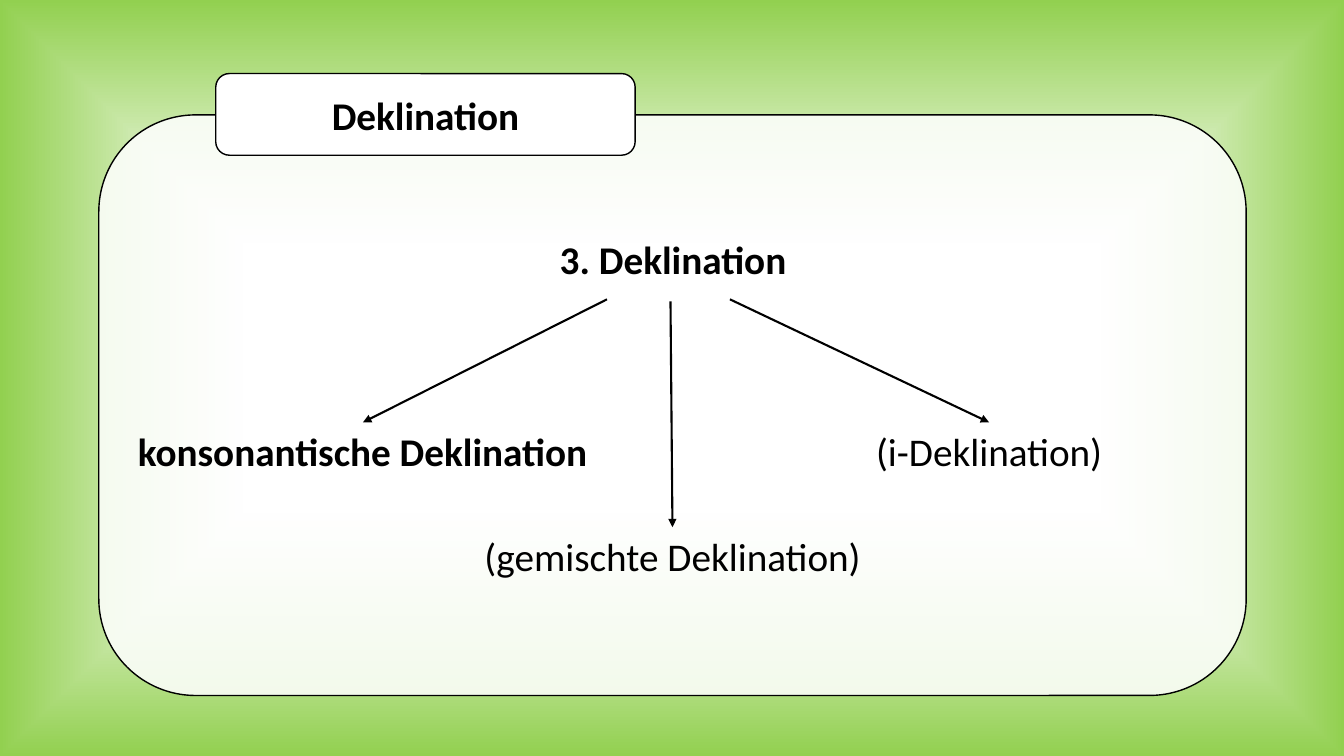
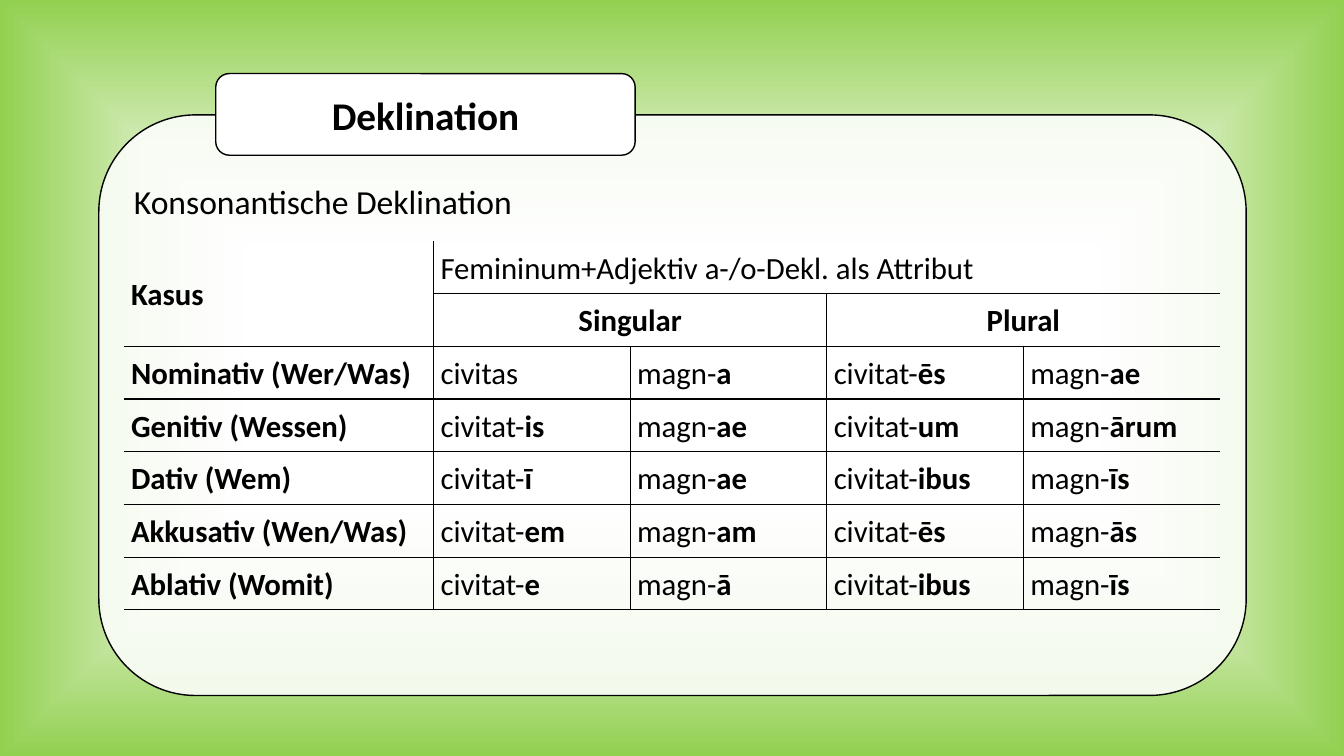
from pptx import Presentation
from pptx import util as u
from pptx.dml.color import RGBColor
from pptx.enum import shapes, text
from pptx.oxml import parse_xml
from pptx.oxml.ns import nsdecls, qn
from lxml import etree

PX = 9144  # EMU in one px, 100 px to the inch
FONT = "Calibri"
BLACK, WHITE = "000000", "FFFFFF"
STOPS = [(3, WHITE), (30, WHITE), (35, WHITE), (100, "92D050"), (100, "5B9BD5")]
NO_STYLE = "{2D5ABB26-0587-4C30-8999-92F81FD0307C}"
LEFT, MID = text.PP_ALIGN.LEFT, text.PP_ALIGN.CENTER

# Case name, then singular and plural of noun and adjective; bold follows the bar
CASES = [
    ("|Nominativ (Wer/Was)", "civitas", "magn-|a", "civitat-|ēs", "magn-|ae"),
    ("|Genitiv (Wessen)", "civitat-|is", "magn-|ae", "civitat-|um", "magn-|ārum"),
    ("|Dativ (Wem)", "civitat-|ī", "magn-|ae", "civitat-|ibus", "magn-|īs"),
    ("|Akkusativ (Wen/Was)", "civitat-|em", "magn-|am", "civitat-|ēs", "magn-|ās"),
    ("|Ablativ (Womit)", "civitat-|e", "magn-|ā", "civitat-|ibus", "magn-|īs"),
]


def px(*vals):
    return [u.Emu(v * PX) for v in vals]


def color(code):
    return RGBColor.from_string(code)


def write(frame, words, size, align=LEFT):
    """Fill the first paragraph; what follows a bar is bold."""
    para = frame.paragraphs[0]
    para.alignment = align
    plain, _, bold = words.partition("|")
    for part, heavy in ((plain, False), (bold, True)):
        if part:
            run = para.add_run()
            run.text = part
            run.font.name = FONT
            run.font.size = u.Pt(size)
            run.font.bold = heavy
            run.font.color.rgb = color(BLACK)
    return para


def paint(slide):
    """Gradient background that runs from the centre to the edges."""
    slide.background.fill.gradient()
    grad = slide.element.find(".//" + qn("a:gradFill"))
    stops = "".join(
        f'<a:gs pos="{pos * 1000}"><a:srgbClr val="{code}"/></a:gs>'
        for pos, code in STOPS)
    grad.getparent().replace(grad, parse_xml(
        f'<a:gradFill {nsdecls("a")} rotWithShape="1"><a:gsLst>{stops}</a:gsLst>'
        '<a:path path="shape"><a:fillToRect l="50000" t="50000" r="50000" b="50000"/>'
        '</a:path></a:gradFill>'))


def panel(slide, *box):
    """White rounded box with a thin black outline."""
    shape = slide.shapes.add_shape(shapes.MSO_SHAPE.ROUNDED_RECTANGLE, *px(*box))
    shape.shadow.inherit = False
    shape.fill.solid()
    shape.fill.fore_color.rgb = color(WHITE)
    shape.line.color.rgb = color(BLACK)
    shape.line.width = u.Pt(1)
    return shape


def label(slide, box, words, size=28, align=MID):
    frame = slide.shapes.add_textbox(*px(*box)).text_frame
    frame.word_wrap = False
    frame.auto_size = text.MSO_AUTO_SIZE.SHAPE_TO_FIT_TEXT
    write(frame, words, size, align)


def arrow(slide, *ends):
    line = slide.shapes.add_connector(shapes.MSO_CONNECTOR.STRAIGHT, *px(*ends))
    line.line.color.rgb = color(BLACK)
    line.line.width = u.Pt(1.5)
    etree.SubElement(line.line._get_or_add_ln(), qn("a:tailEnd"), type="triangle")
    etree.SubElement(line.element.spPr, qn("a:effectLst"))


def border(cell, sides):
    props = cell._tc.get_or_add_tcPr()
    for side in sides:
        props.append(parse_xml(
            f'<a:ln{side} {nsdecls("a")} w="12700"><a:solidFill>'
            f'<a:srgbClr val="{BLACK}"/></a:solidFill></a:ln{side}>'))


def base(deck):
    """Slide with the background, the panel and the title tab."""
    slide = deck.slides.add_slide(deck.slide_layouts[6])
    paint(slide)
    back = panel(slide, 98, 114, 1138, 576)
    tone = back.element.spPr.find(qn("a:solidFill"))[0]
    etree.SubElement(tone, qn("a:alpha"), val="85000")
    tab = panel(slide, 214, 73, 416, 81).text_frame
    tab.vertical_anchor = text.MSO_ANCHOR.MIDDLE
    write(tab, "|Deklination", 28, MID)
    return slide


def forms(slide, *box):
    """Table of the case endings, ruled inside and below."""
    count, cols = len(CASES) + 2, len(CASES[0])
    grid = slide.shapes.add_table(count, cols, *px(*box)).table
    grid._tbl.tblPr.find(qn("a:tableStyleId")).text = NO_STYLE
    grid.first_row = grid.horz_banding = False
    for num, col in enumerate(grid.columns):
        col.width = px(195 if num else 307)[0]

    # Head cells that span several rows or columns
    for top, left, low, right in ((0, 0, 1, 0), (0, 1, 0, 4), (1, 1, 1, 2), (1, 3, 1, 4)):
        grid.cell(top, left).merge(grid.cell(low, right))
    words = {(0, 0): "|Kasus", (0, 1): "Femininum+Adjektiv a-/o-Dekl. als Attribut",
             (1, 1): "|Singular", (1, 3): "|Plural"}
    for row, case in enumerate(CASES, 2):
        words.update({(row, col): word for col, word in enumerate(case)})

    for (row, col), word in words.items():
        cell = grid.cell(row, col)
        span = cell.span_width if cell.is_merge_origin else 1
        rules = (("L", col > 0), ("R", col + span < cols), ("T", row > 0), ("B", True))
        border(cell, [side for side, drawn in rules if drawn])
        cell.fill.background()
        cell.vertical_anchor = text.MSO_ANCHOR.MIDDLE
        cell.margin_left, cell.margin_right, cell.margin_top, cell.margin_bottom = px(7, 7, 0, 0)
        para = write(cell.text_frame, word, 22, MID if row == 1 else LEFT)
        para.line_spacing = 1.07


def main():
    deck = Presentation()
    deck.slide_width, deck.slide_height = px(1333, 750)

    # Kinds of the third declension
    tree = base(deck)
    label(tree, (520, 229, 295, 57), "|3. Deklination")
    label(tree, (119, 419, 481, 57), "|konsonantische Deklination")
    label(tree, (468, 523, 398, 57), "(gemischte Deklination)")
    label(tree, (791, 419, 380, 57), "(i-Deklination)")
    for ends in ((602, 297, 360, 419), (665, 299, 667, 523), (724, 297, 981, 419)):
        arrow(tree, *ends)

    # Endings of the consonantal declension
    chart = base(deck)
    forms(chart, 123, 239, 1087, 366)
    label(chart, (123, 175, 399, 50), "Konsonantische Deklination", 24, LEFT)
    deck.save("out.pptx")


if __name__ == "__main__":
    main()
